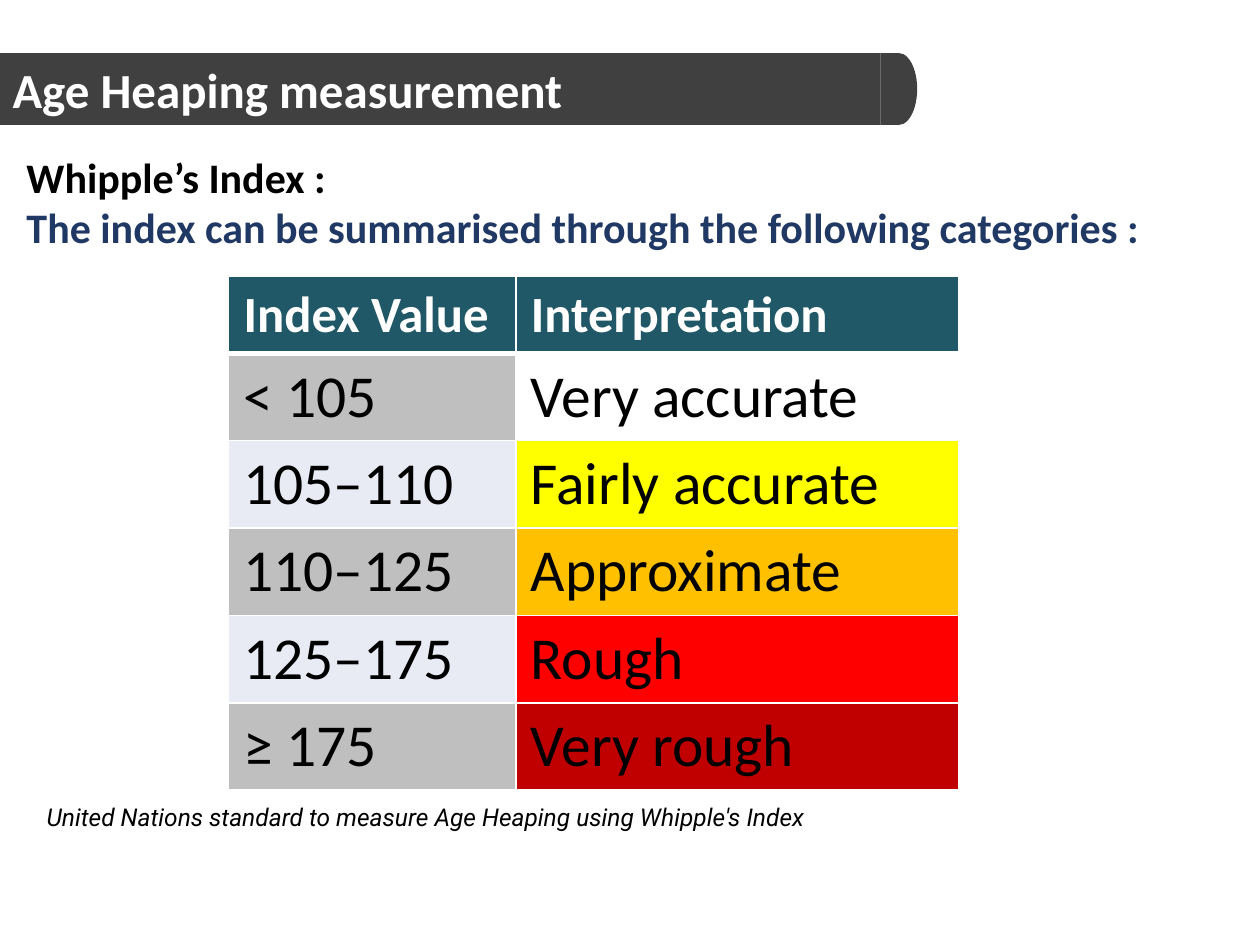
from dataclasses import dataclass

from lxml import etree
from pptx import Presentation
from pptx import util as u
from pptx.dml.color import RGBColor
from pptx.enum import shapes, text
from pptx.oxml import ns


@dataclass(frozen=True)
class Theme:
    font: str = "Calibri"
    note_font: str = "Roboto"
    white: str = "FFFFFF"
    black: str = "000000"
    bar: str = "404040"
    accent: str = "203864"
    header: str = "215867"
    bands: tuple = ("BFBFBF", "E8EBF3")
    title_size: int = 28
    body_size: int = 24
    header_size: int = 29
    cell_size: int = 34
    note_size: int = 14


@dataclass(frozen=True)
class Category:
    index_value: str
    interpretation: str
    color: str


THEME = Theme()
CATEGORIES = [
    Category("< 105", "Very accurate", "FFFFFF"),
    Category("105–110", "Fairly accurate", "FFFF00"),
    Category("110–125", "Approximate", "FFC000"),
    Category("125–175", "Rough", "FF0000"),
    Category("≥ 175", "Very rough", "C00000"),
]


def set_attributes(target, values: dict) -> None:
    for name, value in values.items():
        setattr(target, name, value)


def place(shape, left: float, top: float, width: float, height: float) -> None:
    lengths = zip(("left", "top", "width", "height"), (left, top, width, height))
    set_attributes(shape, {name: u.Cm(value) for name, value in lengths})


def fill_solid(target, color: str) -> None:
    target.fill.solid()
    target.fill.fore_color.rgb = RGBColor.from_string(color)


def write(paragraph, words: str, size: int, color: str, name: str = THEME.font,
          bold: bool = False, italic: bool = False) -> None:
    set_attributes(paragraph, {"alignment": text.PP_ALIGN.LEFT, "line_spacing": 1.0,
                               "space_before": u.Pt(0)})
    run = paragraph.add_run()
    run.text = words
    set_attributes(run.font, {"size": u.Pt(size), "name": name, "bold": bold, "italic": italic})
    run.font.color.rgb = RGBColor.from_string(color)


def remove_bullet(paragraph) -> None:
    properties = paragraph._p.get_or_add_pPr()
    properties.set("marL", "0")
    properties.set("indent", "0")
    etree.SubElement(properties, ns.qn("a:buNone"))


def set_borders(cell, color: str, bottom: float) -> None:
    properties = cell._tc.get_or_add_tcPr()
    widths = {"a:lnL": 1, "a:lnR": 1, "a:lnT": 1, "a:lnB": bottom}
    for position, (tag, width) in enumerate(widths.items()):
        line = etree.Element(ns.qn(tag), w=str(u.Pt(width)))
        fill = etree.SubElement(line, ns.qn("a:solidFill"))
        etree.SubElement(fill, ns.qn("a:srgbClr"), val=color)
        properties.insert(position, line)


def write_cell(cell, words: str, fill: str, is_header: bool) -> None:
    set_attributes(cell, {"margin_left": u.Cm(0.3), "margin_right": u.Cm(0.3),
                          "margin_top": u.Cm(0.15), "margin_bottom": u.Cm(0.15)})
    fill_solid(cell, fill)
    set_borders(cell, THEME.white, 3 if is_header else 1)
    write(cell.text_frame.paragraphs[0], words,
          THEME.header_size if is_header else THEME.cell_size,
          THEME.white if is_header else THEME.black, bold=is_header)


def add_title(slide) -> None:
    title = slide.shapes.title
    place(title, 0, 1.07, 17.75, 1.45)
    fill_solid(title, THEME.bar)
    set_attributes(title.text_frame, {"auto_size": text.MSO_AUTO_SIZE.NONE,
                                      "vertical_anchor": text.MSO_ANCHOR.MIDDLE})
    write(title.text_frame.paragraphs[0], "Age Heaping measurement",
          THEME.title_size, THEME.white, bold=True)
    # Rounded end of the title bar
    cap = slide.shapes.add_shape(shapes.MSO_SHAPE.FLOWCHART_DELAY,
                                 title.left + title.width, title.top, u.Cm(0.74), title.height)
    cap.shadow.inherit = False
    fill_solid(cap, THEME.bar)
    cap.line.fill.background()


def add_introduction(slide) -> None:
    body = slide.placeholders[1]
    place(body, 0.28, 2.92, 23.34, 2.32)
    frame = body.text_frame
    set_attributes(frame, {"auto_size": text.MSO_AUTO_SIZE.NONE, "word_wrap": True,
                           "vertical_anchor": text.MSO_ANCHOR.TOP})
    lines = [("Whipple’s Index :", THEME.black),
             ("The index can be summarised through the following categories :", THEME.accent)]
    for number, (words, color) in enumerate(lines):
        paragraph = frame.add_paragraph() if number else frame.paragraphs[0]
        remove_bullet(paragraph)
        write(paragraph, words, THEME.body_size, color, bold=True)


def add_index_table(slide) -> None:
    widths, header_height, row_height = (5.79, 8.92), 1.55, 1.76
    height = header_height + row_height * len(CATEGORIES)
    table = slide.shapes.add_table(len(CATEGORIES) + 1, len(widths), u.Cm(4.61), u.Cm(5.57),
                                   u.Cm(sum(widths)), u.Cm(height)).table
    for column, width in zip(table.columns, widths):
        column.width = u.Cm(width)
    for number, row in enumerate(table.rows):
        row.height = u.Cm(row_height if number else header_height)
    for column, words in enumerate(("Index Value", "Interpretation")):
        write_cell(table.cell(0, column), words, THEME.header, True)
    for number, category in enumerate(CATEGORIES):
        band = THEME.bands[number % len(THEME.bands)]
        write_cell(table.cell(number + 1, 0), category.index_value, band, False)
        write_cell(table.cell(number + 1, 1), category.interpretation, category.color, False)


def add_note(slide) -> None:
    note = slide.shapes.add_textbox(u.Cm(0.69), u.Cm(16.05), u.Cm(24), u.Cm(0.86))
    note.text_frame.word_wrap = True
    write(note.text_frame.paragraphs[0],
          "United Nations standard to measure Age Heaping using Whipple's Index",
          THEME.note_size, THEME.black, name=THEME.note_font, italic=True)


def main() -> None:
    presentation = Presentation()
    set_attributes(presentation, {"slide_width": u.Cm(25.4), "slide_height": u.Cm(19.05)})
    slide = presentation.slides.add_slide(presentation.slide_layouts[1])
    add_title(slide)
    add_introduction(slide)
    add_index_table(slide)
    add_note(slide)
    presentation.save("out.pptx")


if __name__ == "__main__":
    main()
